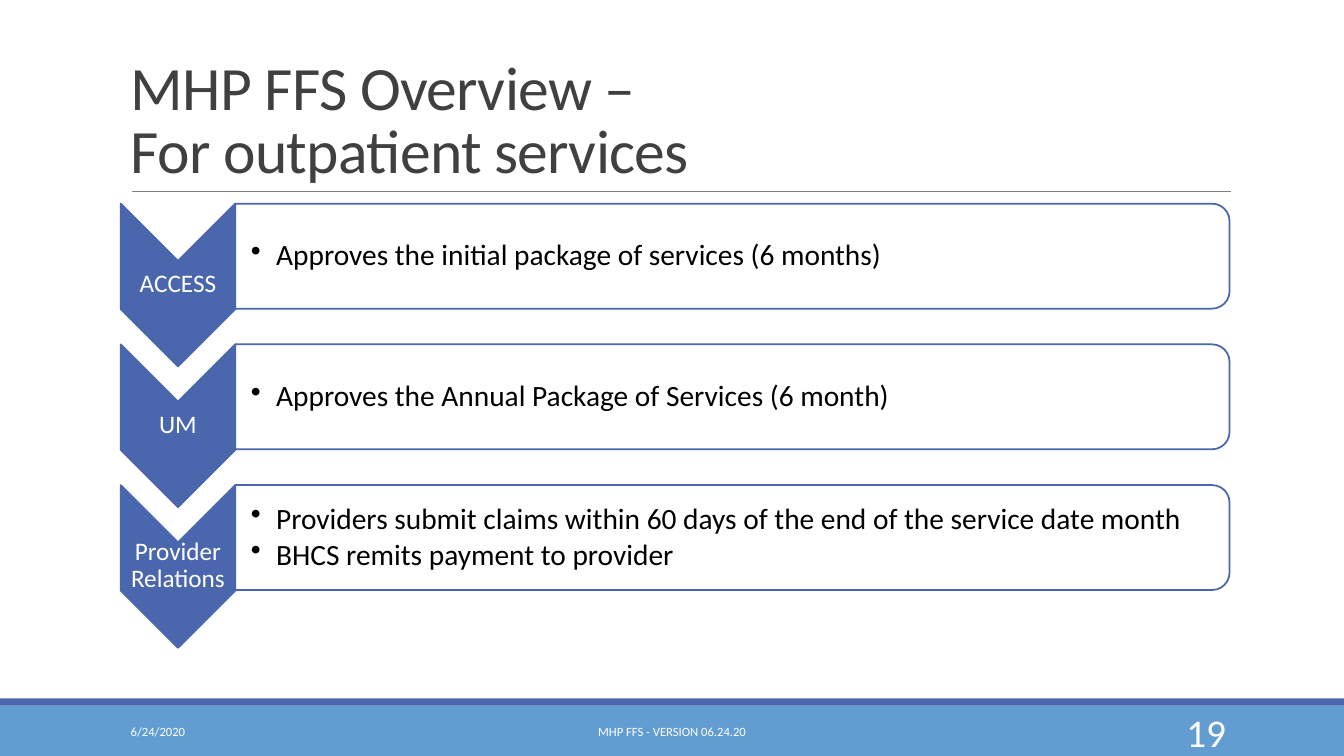
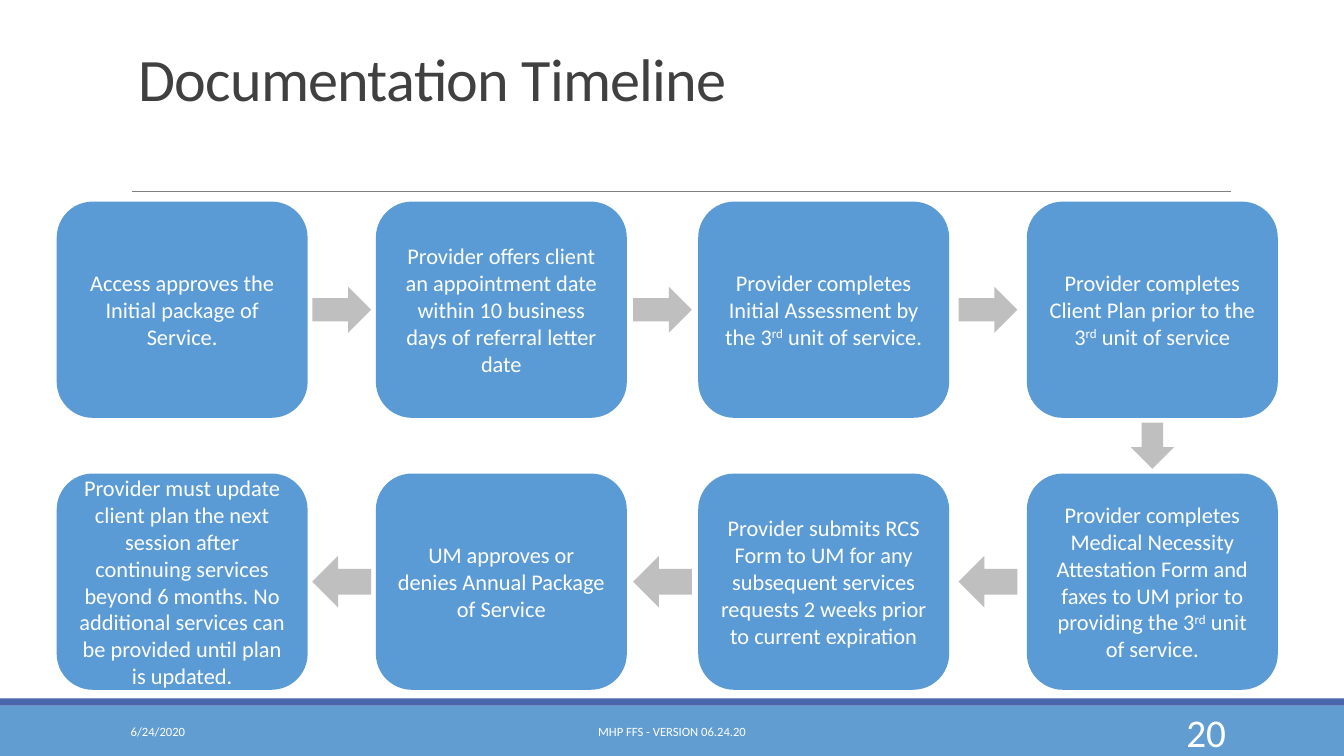
from dataclasses import dataclass

import pptx
import pptx.dml.color
import pptx.enum.shapes
import pptx.enum.text
import pptx.oxml.ns
import pptx.util
from lxml import etree

PX = 9525  # EMU per px, 96 px to the inch
SHAPE = pptx.enum.shapes.MSO_SHAPE
ALIGN = pptx.enum.text.PP_ALIGN
ANCHOR = pptx.enum.text.MSO_ANCHOR
qn = pptx.oxml.ns.qn


@dataclass(frozen=True)
class Theme:
    font: str = "Calibri"
    title: str = "404040"
    rule: str = "808080"
    band: str = "629DD1"
    accent: str = "4A66AC"
    card: str = "5B9BD5"
    arrow: str = "BFBFBF"
    white: str = "FFFFFF"
    black: str = "000000"
    footer_size: int = 9
    number_size: int = 28
    label_size: int = 18
    bullet_size: int = 21
    card_size: int = 16


THEME = Theme()
WIDTH, HEIGHT = 1280, 720


# Shared helpers
def px(*lengths):
    return [pptx.util.Emu(round(length * PX)) for length in lengths]


def rgb(color):
    return pptx.dml.color.RGBColor.from_string(color)


def style_run(run, size, color):
    run.font.name = THEME.font
    run.font.size = pptx.util.Pt(size)
    run.font.color.rgb = rgb(color)


def add_block(slide, kind, box, fill, line=None):
    block = slide.shapes.add_shape(kind, *px(*box))
    block.shadow.inherit = False
    block.fill.solid()
    block.fill.fore_color.rgb = rgb(fill)
    if line:
        block.line.color.rgb = rgb(line)
        block.line.width = pptx.util.Pt(1.25)
    else:
        block.line.fill.background()
    return block


def add_turned_block(slide, kind, box, fill, line):
    """Place a shape turned by 90 degrees so that it covers the box."""
    x, y, w, h = box
    unturned = (x + (w - h) / 2, y + (h - w) / 2, h, w)
    add_block(slide, kind, unturned, fill, line).rotation = 90


def add_text(slide, box, text, size, color, align=ALIGN.LEFT, insets=None):
    frame = slide.shapes.add_textbox(*px(*box)).text_frame
    frame.word_wrap = True
    frame.vertical_anchor = ANCHOR.MIDDLE
    if insets:
        (frame.margin_left, frame.margin_top,
         frame.margin_right, frame.margin_bottom) = px(*insets)
    frame.text = text
    for paragraph in frame.paragraphs:
        paragraph.alignment = align
        for run in paragraph.runs:
            style_run(run, size, color)
    return frame


# Parts that the slides share
def draw_layout(slide, layout):
    """Draw the bands and the title rule, then hand them to the layout."""
    rule = slide.shapes.add_connector(
        pptx.enum.shapes.MSO_CONNECTOR.STRAIGHT, *px(126, 182, 1172, 182))
    rule.line.color.rgb = rgb(THEME.rule)
    rule.line.width = pptx.util.Pt(0.5)
    etree.SubElement(rule.element.spPr, qn("a:effectLst"))
    footer_band = add_block(slide, SHAPE.RECTANGLE, (0, 672, WIDTH, 48), THEME.band)
    accent_band = add_block(slide, SHAPE.RECTANGLE, (0, 665, WIDTH, 7), THEME.accent)
    for part in (footer_band, accent_band, rule):
        layout.shapes.element.append(part.element)


def add_title(slide, text, left, size, space_below=5):
    title = slide.shapes.title
    title.left, title.top, title.width, title.height = px(left, 29, 1056, 153)
    frame = title.text_frame
    frame.auto_size = pptx.enum.text.MSO_AUTO_SIZE.NONE
    frame.word_wrap = True
    frame.vertical_anchor = ANCHOR.BOTTOM
    frame.margin_bottom, = px(space_below)
    frame.text = text
    heading = frame.paragraphs[0]
    heading.alignment = ALIGN.LEFT
    heading.line_spacing = 0.85
    for run in heading.runs:
        style_run(run, size, THEME.title)
        run.font._element.set("spc", "-50")


def add_footer(slide, number):
    for left, width, text, size, align in (
            (115, 259, "6/24/2020", THEME.footer_size, ALIGN.LEFT),
            (387, 506, "MHP FFS - VERSION 06.24.20", THEME.footer_size, ALIGN.CENTER),
            (1040, 137, number, THEME.number_size, ALIGN.RIGHT)):
        add_text(slide, (left, 678, width, 38), text, size, THEME.white, align)


# Overview: a chevron and a bullet panel for each unit
def add_bullets(slide, box, lines):
    frame = add_text(slide, box, "\n".join(lines), THEME.bullet_size,
                     THEME.black, insets=(15, 1, 1, 1))
    for paragraph in frame.paragraphs:
        paragraph.line_spacing = 0.9
        paragraph.space_after = pptx.util.Pt(3)
        properties = paragraph._p.get_or_add_pPr()
        indent = 24 * PX
        properties.set("marL", str(indent))
        properties.set("indent", str(-indent))
        etree.SubElement(properties, qn("a:buChar")).set("char", "•")


def add_unit(slide, left, top, unit, duties):
    chevron_w, chevron_h, panel_w, panel_h = 109, 155, 947, 100
    add_turned_block(slide, SHAPE.CHEVRON, (left, top, chevron_w, chevron_h),
                     THEME.accent, THEME.accent)
    label = add_text(slide, (left, top + 54, chevron_w, 46), unit,
                     THEME.label_size, THEME.white, ALIGN.CENTER, (1, 1, 1, 1))
    label.paragraphs[0].line_spacing = 0.9
    panel_left = left + chevron_w
    add_turned_block(slide, SHAPE.ROUND_2_SAME_RECTANGLE,
                     (panel_left, top, panel_w, panel_h), THEME.white, THEME.accent)
    add_bullets(slide, (panel_left, top + 5, panel_w - 5, panel_h - 10), duties)


def build_overview(slide):
    add_title(slide, "MHP FFS Overview –\vFor outpatient services", 115, 44)
    units = (
        ("ACCESS", ["Approves the initial package of services (6 months)"]),
        ("UM", ["Approves the Annual Package of Services (6 month)"]),
        ("Provider Relations", [
            "Providers submit claims within 60 days of the end of the service date month",
            "BHCS remits payment to provider"]),
    )
    for row, (unit, duties) in enumerate(units):
        add_unit(slide, 115, 194 + row * 134, unit, duties)
    add_footer(slide, "19")


# Timeline: cards run right, then down, then back left
def add_card(slide, box, text):
    """Write a card; text between ^ marks is raised."""
    frame = add_block(slide, SHAPE.ROUNDED_RECTANGLE, box, THEME.card).text_frame
    frame.word_wrap = True
    frame.vertical_anchor = ANCHOR.MIDDLE
    step = frame.paragraphs[0]
    step.alignment = ALIGN.CENTER
    for index, piece in enumerate(text.split("^")):
        run = step.add_run()
        run.text = piece
        style_run(run, THEME.card_size, THEME.white)
        if index % 2:
            run.font._element.set("baseline", "30000")


def add_arrow(slide, kind, center_x, center_y, w, h):
    add_block(slide, kind, (center_x - w / 2, center_y - h / 2, w, h), THEME.arrow)


def build_timeline(slide):
    add_title(slide, "Documentation Timeline", 122, 43, space_below=74)
    columns, rows = (54, 358, 665, 978), (192, 451)
    card_w, card_h = 239, 206
    steps = (
        ("Access approves the Initial package of Service.",
         "Provider offers client an appointment date within 10 business days "
         "of referral letter date",
         "Provider completes Initial Assessment by the 3^rd^ unit of service.",
         "Provider completes Client Plan prior to the 3^rd^ unit of service"),
        ("Provider must update client plan the next session after continuing "
         "services beyond 6 months. No additional services can be provided "
         "until plan is updated.",
         "UM approves or denies Annual Package of Service",
         "Provider submits RCS Form to UM for any subsequent services requests "
         "2 weeks prior to current expiration",
         "Provider completes Medical Necessity Attestation Form and faxes to UM "
         "prior to providing the 3^rd^ unit of service."),
    )
    row_arrows = ((SHAPE.RIGHT_ARROW, 44), (SHAPE.LEFT_ARROW, 49))
    for top, texts, (arrow, arrow_h) in zip(rows, steps, row_arrows):
        for left, text in zip(columns, texts):
            add_card(slide, (left, top, card_w, card_h), text)
        # Each arrow sits in the middle of the gap between two cards
        for left, following in zip(columns, columns[1:]):
            add_arrow(slide, arrow, (left + card_w + following) / 2,
                      top + card_h / 2, 56, arrow_h)
    add_arrow(slide, SHAPE.DOWN_ARROW, columns[-1] + card_w / 2,
              (rows[0] + card_h + rows[1]) / 2, 41, 44)
    add_footer(slide, "20")


def main():
    deck = pptx.Presentation()
    deck.slide_width, deck.slide_height = px(WIDTH, HEIGHT)
    layout = deck.slide_layouts.get_by_name("Title Only")
    overview = deck.slides.add_slide(layout)
    draw_layout(overview, layout)
    build_overview(overview)
    build_timeline(deck.slides.add_slide(layout))
    deck.save("out.pptx")


if __name__ == "__main__":
    main()
